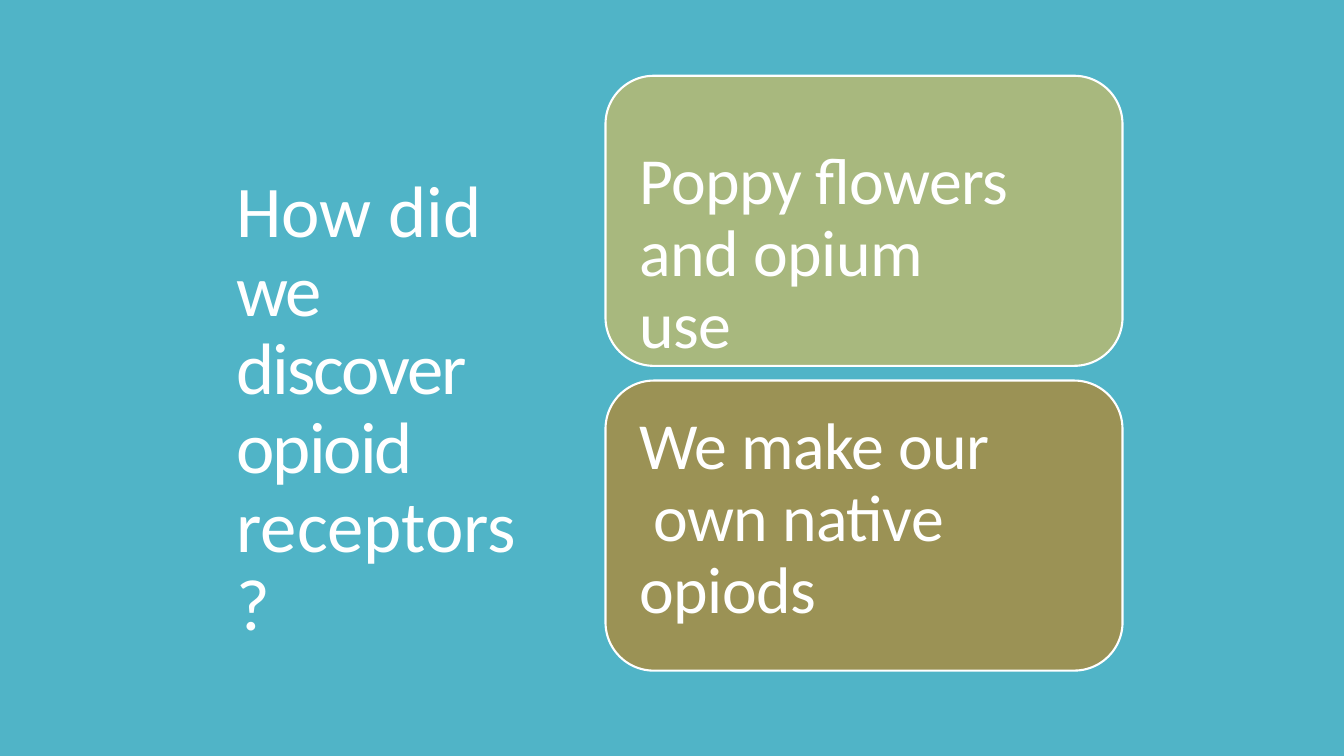
from pptx import Presentation
from pptx import util as u
from pptx.dml.color import RGBColor
from pptx.enum import shapes, text

COLORS = {"lagoon": "50B4C7", "sage": "A8B87E", "olive": "9B9255", "white": "FFFFFF"}


class SlideBuilder:
    font = "Calibri"

    def __init__(self, page):
        self.page = page

    def color(self, name):
        return RGBColor.from_string(COLORS[name])

    def block(self, kind, frame, fill):
        block = self.page.shapes.add_shape(kind, *(u.Cm(length) for length in frame))
        block.shadow.inherit = False
        block.fill.solid()
        block.fill.fore_color.rgb = self.color(fill)
        block.line.fill.background()
        return block

    def backdrop(self, width, height, fill):
        self.block(shapes.MSO_SHAPE.RECTANGLE, (0, 0, width, height), fill)

    def card(self, frame, fill):
        card = self.block(shapes.MSO_SHAPE.ROUNDED_RECTANGLE, frame, fill)
        card.line.color.rgb = self.color("white")
        card.line.width = u.Pt(1.5)

    def words(self, frame, lines, size, spacing, before, inset):
        """Add one paragraph; lines holds (wording, letter spacing in points)."""
        box = self.page.shapes.add_textbox(*(u.Cm(length) for length in frame))
        body = box.text_frame
        body.word_wrap = True
        body.auto_size = text.MSO_AUTO_SIZE.SHAPE_TO_FIT_TEXT
        body.vertical_anchor = text.MSO_ANCHOR.TOP
        body.margin_left = u.Cm(0.03)
        body.margin_right = body.margin_bottom = 0
        body.margin_top = u.Cm(inset)
        para = body.paragraphs[0]
        para.line_spacing = spacing
        para.space_before = u.Pt(before)
        for index, (wording, tracking) in enumerate(lines):
            if index:
                para.add_line_break()
            span = para.add_run()
            span.text = wording
            span.font.name = self.font
            span.font.size = u.Pt(size)
            span.font.color.rgb = self.color("white")
            span._r.get_or_add_rPr().set("spc", str(round(tracking * 100)))


def main():
    width, height = 33.87, 19.05
    deck = Presentation()
    deck.slide_width, deck.slide_height = u.Cm(width), u.Cm(height)
    slide = SlideBuilder(deck.slides.add_slide(deck.slide_layouts[6]))
    slide.backdrop(width, height, "lagoon")

    for row, fill in enumerate(("sage", "olive")):
        slide.card((15.26, 1.91 + row * 7.68, 13.03, 7.31), fill)

    slide.words((5.93, 4.09, 7.52, 10.19),
                [("How did", 0), ("we", -1.4), ("discover", -1.5),
                 ("opioid", -1.4), ("receptors?", 0)],
                size=52, spacing=u.Pt(56.2), before=8, inset=0.28)
    slide.words((16.08, 3.43, 9.91, 3.89),
                [("Poppy flowers", -0.5), ("and opium", -0.3), ("use", -0.2)],
                size=47, spacing=u.Pt(51.6), before=6.8, inset=0.23)
    slide.words((16.08, 10.19, 8.92, 5.72),
                [("We make our", -0.4), (" own native", -0.4), ("opiods", -0.3)],
                size=47, spacing=0.91, before=5.8, inset=0.2)

    deck.save("out.pptx")


if __name__ == "__main__":
    main()
